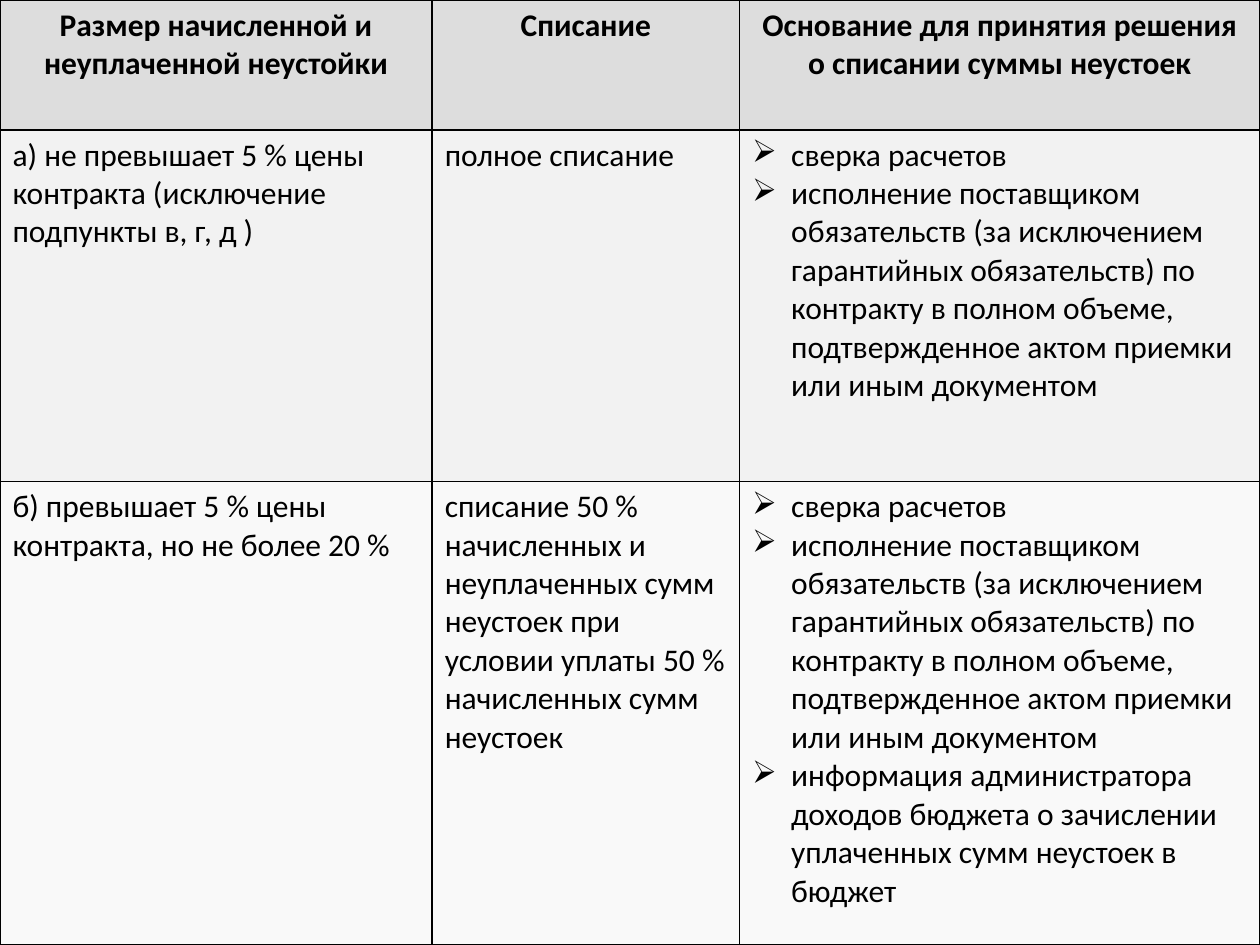
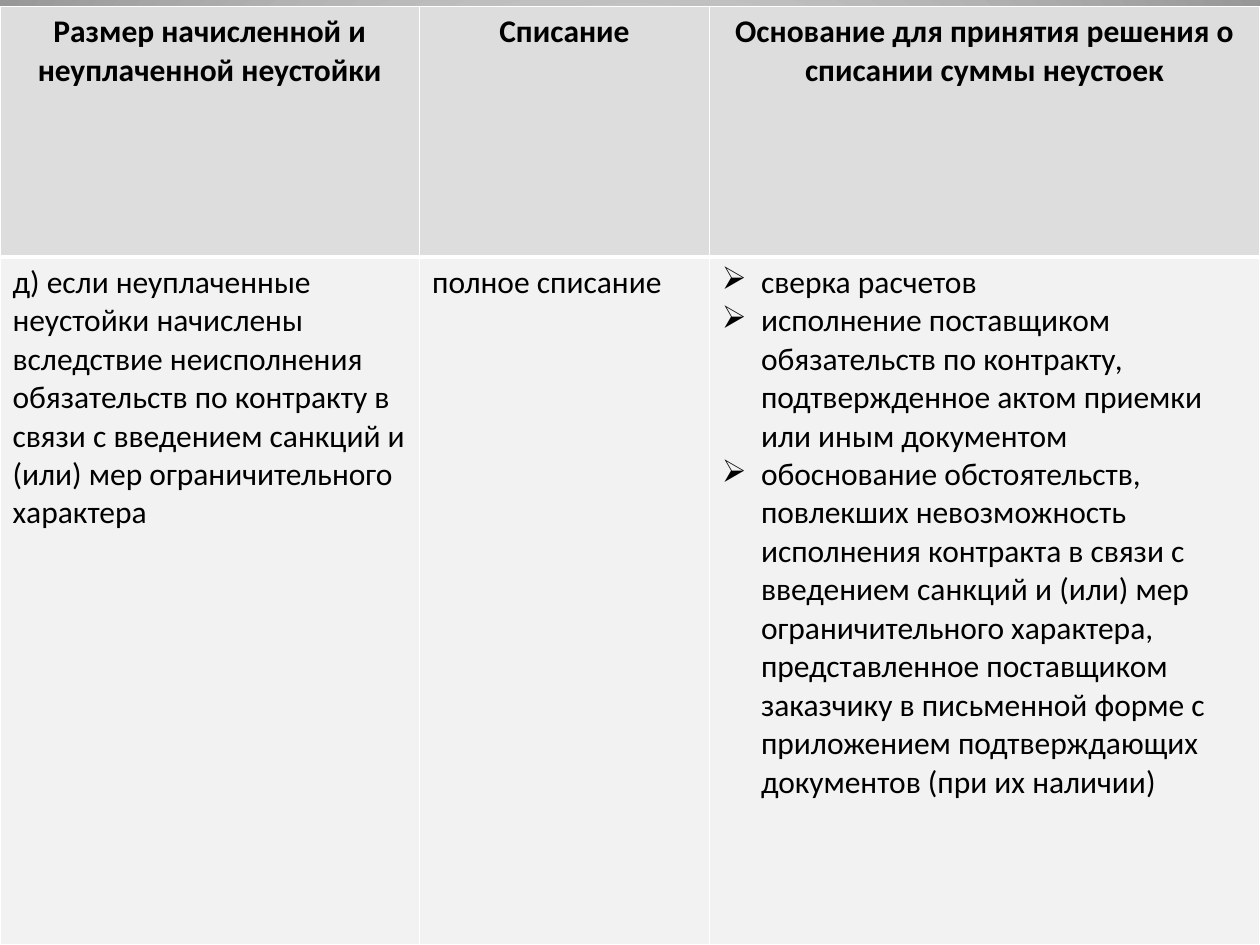
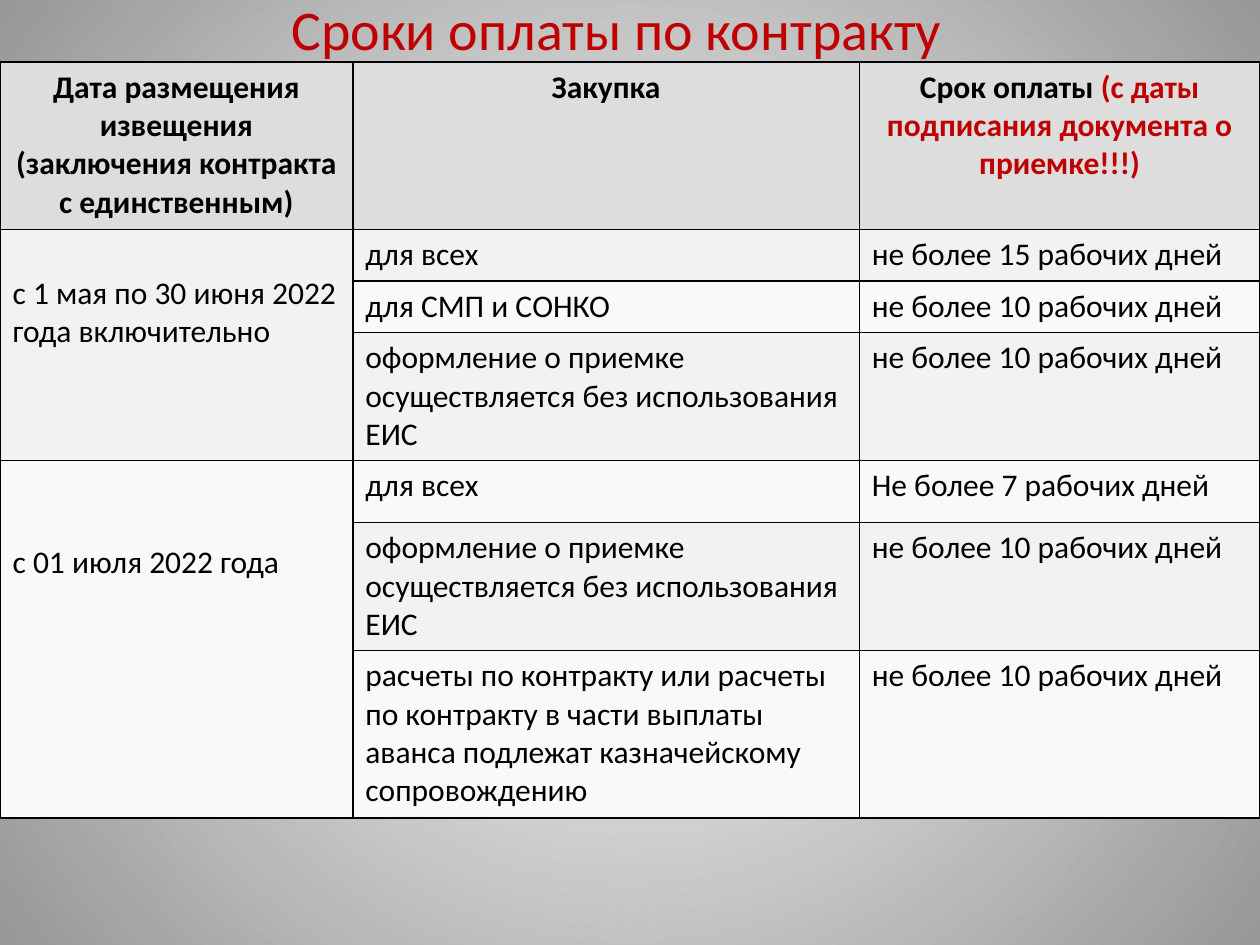
from lxml import etree
from pptx import Presentation
from pptx.dml.color import RGBColor
from pptx.enum.text import MSO_ANCHOR, MSO_AUTO_SIZE, PP_ALIGN
from pptx.oxml.ns import qn
from pptx.util import Inches, Pt

CENTER, LEFT = PP_ALIGN.CENTER, PP_ALIGN.LEFT
TOP = MSO_ANCHOR.TOP
NO_AUTOFIT = MSO_AUTO_SIZE.NONE

FONT = "Calibri"
BLACK, WHITE, RED = "000000", "FFFFFF", "C00000"
BACKGROUND_EDGE = "979797"
HEADER_FILL, ODD_FILL, EVEN_FILL = "DDDDDD", "F2F2F2", "F9F9F9"
TITLE_ONLY, BLANK = 5, 6
BODY_SIZE, TITLE_SIZE = 18, 32
CELL_TOP, LINE_HEIGHT = 0.05, 0.305
BULLET_INDENT = 0.31

WRITE_OFF_HEADER = [
    "Размер начисленной и неуплаченной неустойки",
    "Списание",
    "Основание для принятия решения о списании суммы неустоек",
]
RECONCILIATION = "сверка расчетов"
FULL_PERFORMANCE = (
    "исполнение поставщиком обязательств (за исключением гарантийных обязательств) "
    "по контракту в полном объеме, подтвержденное актом приемки или иным документом"
)
WITHOUT_EIS = "оформление о приемке осуществляется без использования ЕИС"
TEN_DAYS = "не более 10 рабочих дней"

PARTIAL_WRITE_OFF = [
    WRITE_OFF_HEADER,
    [
        "а) не превышает 5 % цены контракта (исключение подпункты в, г, д )",
        "полное списание",
        [RECONCILIATION, FULL_PERFORMANCE],
    ],
    [
        "б) превышает 5 % цены контракта, но не более 20 %",
        "списание 50 % начисленных и неуплаченных сумм неустоек "
        "при условии уплаты 50 % начисленных сумм неустоек",
        [
            RECONCILIATION,
            FULL_PERFORMANCE,
            "информация администратора доходов бюджета о зачислении "
            "уплаченных сумм неустоек в бюджет",
        ],
    ],
]
SANCTIONS_WRITE_OFF = [
    WRITE_OFF_HEADER,
    [
        "д) если неуплаченные неустойки начислены вследствие неисполнения обязательств "
        "по контракту в связи с введением санкций и (или) мер ограничительного характера",
        "полное списание",
        [
            RECONCILIATION,
            "исполнение поставщиком обязательств по контракту, "
            "подтвержденное актом приемки или иным документом",
            "обоснование обстоятельств, повлекших невозможность исполнения контракта "
            "в связи с введением санкций и (или) мер ограничительного характера, "
            "представленное поставщиком заказчику в письменной форме с приложением "
            "подтверждающих документов (при их наличии)",
        ],
    ],
]
PAYMENT_TERMS = [
    [
        "Дата размещения извещения (заключения контракта с единственным)",
        "Закупка",
        "Срок оплаты ",
    ],
    ["с 1 мая по 30 июня 2022 года включительно", "для всех", "не более 15 рабочих дней"],
    ["", "для СМП и СОНКО", TEN_DAYS],
    ["", WITHOUT_EIS, TEN_DAYS],
    ["с 01 июля 2022 года", "для всех", "Не более 7 рабочих дней"],
    ["", WITHOUT_EIS, TEN_DAYS],
    [
        "",
        "расчеты по контракту или расчеты по контракту в части выплаты аванса "
        "подлежат казначейскому\nсопровождению",
        TEN_DAYS,
    ],
]


def rgb(color):
    return RGBColor.from_string(color)


def format_font(font, size, color, bold=False):
    font.name = FONT
    font.size = Pt(size)
    font.bold = bold
    font.color.rgb = rgb(color)


def set_background(master):
    fill = master.background.fill
    fill.gradient()
    for stop, color, position in zip(fill.gradient_stops, (WHITE, BACKGROUND_EDGE), (0, 1)):
        stop.color.rgb = rgb(color)
        stop.position = position
    gradient = master.element.find(".//" + qn("a:gradFill"))
    gradient.remove(gradient.find(qn("a:lin")))
    circle = etree.SubElement(gradient, qn("a:path"), path="circle")
    etree.SubElement(circle, qn("a:fillToRect"), l="50000", t="50000", r="50000", b="50000")


def add_bullet(paragraph):
    properties = paragraph._p.get_or_add_pPr()
    properties.set("marL", str(Inches(BULLET_INDENT)))
    properties.set("indent", str(-Inches(BULLET_INDENT)))
    etree.SubElement(properties, qn("a:buChar"), char="➢")


def set_borders(cell, color, top, bottom):
    properties = cell._tc.get_or_add_tcPr()
    for side, width in (("L", 1), ("R", 1), ("T", top), ("B", bottom)):
        line = etree.SubElement(properties, qn("a:ln" + side), w=str(Pt(width)))
        solid = etree.SubElement(line, qn("a:solidFill"))
        etree.SubElement(solid, qn("a:srgbClr"), val=color)


def fill_cell(cell, content, row_index):
    is_header = row_index == 0
    cell.fill.solid()
    cell.fill.fore_color.rgb = rgb(
        HEADER_FILL if is_header else ODD_FILL if row_index % 2 else EVEN_FILL
    )
    is_list = isinstance(content, list)
    cell.text_frame.text = "\n".join(content) if is_list else content
    for paragraph in cell.text_frame.paragraphs:
        if is_list:
            add_bullet(paragraph)
        paragraph.alignment = CENTER if is_header else LEFT
        format_font(paragraph.font, BODY_SIZE, BLACK, is_header)
        for run in paragraph.runs:
            format_font(run.font, BODY_SIZE, BLACK, is_header)


def add_grid(slide, top, widths, heights, rows, border=BLACK, header_rule=1):
    table = slide.shapes.add_table(
        len(rows), len(widths), 0, Inches(top), Inches(sum(widths)), Inches(sum(heights))
    ).table
    table.horz_banding = False
    for column, width in zip(table.columns, widths):
        column.width = Inches(width)
    for row_index, (row, height, contents) in enumerate(zip(table.rows, heights, rows)):
        row.height = Inches(height)
        rule_above = header_rule if row_index == 1 else 1
        rule_below = header_rule if row_index == 0 else 1
        for cell, content in zip(row.cells, contents):
            set_borders(cell, border, rule_above, rule_below)
            fill_cell(cell, content, row_index)
    return table


def merge_period(table, first_row, last_row, lines_above):
    period = table.cell(first_row, 0)
    period.merge(table.cell(last_row, 0))
    period.margin_top = Inches(CELL_TOP + LINE_HEIGHT * lines_above)


def add_title(slide, text, left, top, width, height):
    title = slide.shapes.title
    title.left, title.top = Inches(left), Inches(top)
    title.width, title.height = Inches(width), Inches(height)
    frame = title.text_frame
    frame.margin_left = frame.margin_right = frame.margin_top = frame.margin_bottom = 0
    frame.auto_size = NO_AUTOFIT
    frame.vertical_anchor = TOP
    frame.word_wrap = True
    frame.text = text
    heading = frame.paragraphs[0]
    heading.alignment = CENTER
    heading.line_spacing = 0.9
    format_font(heading.runs[0].font, TITLE_SIZE, RED)


def add_payment_slide(slide):
    add_title(slide, "Сроки оплаты по контракту", 0.51, 0.02, 8.77, 0.48)
    table = add_grid(
        slide, 0.49, [2.8, 4.02, 3.18], [1.33, 0.41, 0.41, 1.01, 0.49, 1.01, 1.33], PAYMENT_TERMS
    )
    merge_period(table, 1, 3, 1)
    merge_period(table, 4, 6, 2)
    start_note = table.cell(0, 2).text_frame.paragraphs[0].add_run()
    start_note.text = "(с даты подписания документа о приемке!!!)"
    format_font(start_note.font, BODY_SIZE, RED, True)


def main():
    deck = Presentation()
    deck.slide_width, deck.slide_height = Inches(10), Inches(7.5)
    set_background(deck.slide_master)
    blank, title_only = deck.slide_layouts[BLANK], deck.slide_layouts[TITLE_ONLY]
    add_grid(
        deck.slides.add_slide(blank), 0, [3.43, 2.44, 4.13], [1.03, 2.79, 3.68], PARTIAL_WRITE_OFF
    )
    add_grid(
        deck.slides.add_slide(blank), 0.05, [3.33, 2.3, 4.37], [1.99, 5.46],
        SANCTIONS_WRITE_OFF, WHITE, 3,
    )
    add_payment_slide(deck.slides.add_slide(title_only))
    deck.save("out.pptx")


if __name__ == "__main__":
    main()
